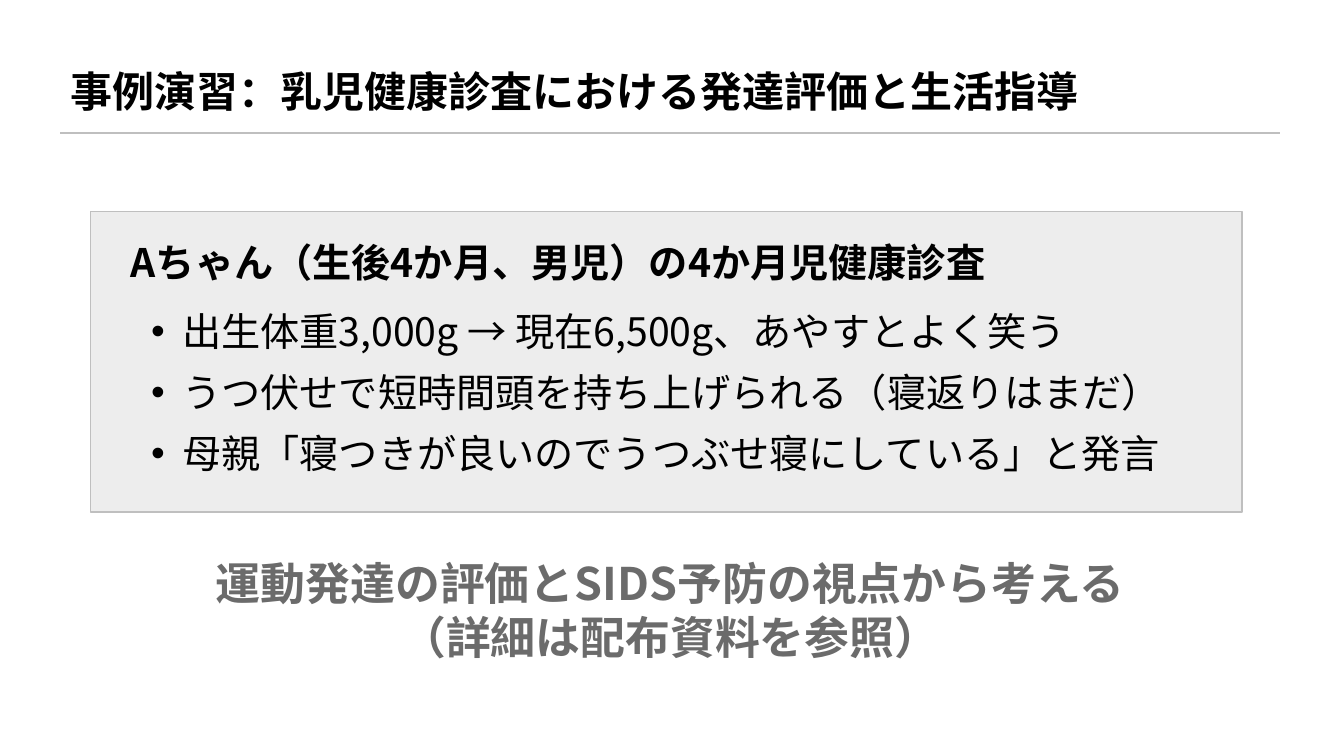
from lxml.etree import SubElement
from pptx import Presentation
from pptx.dml.color import RGBColor
from pptx.enum.shapes import MSO_CONNECTOR, MSO_SHAPE
from pptx.enum.text import MSO_ANCHOR, PP_ALIGN
from pptx.oxml.ns import qn
from pptx.util import Inches, Pt

FONT = "Noto Sans CJK JP"
BLACK = RGBColor(0x00, 0x00, 0x00)
GRAY = RGBColor(0x6B, 0x6B, 0x6B)
RULE = RGBColor(0xBF, 0xBF, 0xBF)
PANEL = RGBColor(0xED, 0xED, 0xED)

FINDINGS = [
    "出生体重3,000g → 現在6,500g、あやすとよく笑う",
    "うつ伏せで短時間頭を持ち上げられる（寝返りはまだ）",
    "母親「寝つきが良いのでうつぶせ寝にしている」と発言",
]
CONCLUSION = ["運動発達の評価とSIDS予防の視点から考える", "（詳細は配布資料を参照）"]


def add_bullet(paragraph):
    """Give a paragraph a hanging round bullet."""
    properties = paragraph._p.get_or_add_pPr()
    properties.set("marL", str(Inches(0.31)))
    properties.set("indent", str(-Inches(0.31)))
    SubElement(properties, qn("a:buFont")).set("typeface", "Arial")
    SubElement(properties, qn("a:buChar")).set("char", "•")
    paragraph.space_after = Pt(10)


def add_text(slide, box, lines, size, color=BLACK, bold=True,
             align=PP_ALIGN.LEFT, anchor=MSO_ANCHOR.MIDDLE, bulleted=False):
    """Write lines of text, one paragraph each, in a wrapped box."""
    frame = slide.shapes.add_textbox(*map(Inches, box)).text_frame
    frame.word_wrap = True
    frame.vertical_anchor = anchor
    frame.text = "\n".join(lines)
    for paragraph in frame.paragraphs:
        paragraph.alignment = align
        if bulleted:
            add_bullet(paragraph)
        for run in paragraph.runs:
            run.font.name = FONT
            run.font.size = Pt(size)
            run.font.bold = bold
            run.font.color.rgb = color
            SubElement(run.font._element, qn("a:ea")).set("typeface", FONT)


def add_rule(slide, left, right, top):
    """Draw a thin horizontal rule."""
    rule = slide.shapes.add_connector(
        MSO_CONNECTOR.STRAIGHT, Inches(left), Inches(top), Inches(right), Inches(top))
    rule.line.color.rgb = RULE
    rule.line.width = Pt(1)
    SubElement(rule._element.spPr, qn("a:effectLst"))


def add_panel(slide, box):
    """Draw the shaded panel behind the case."""
    panel = slide.shapes.add_shape(MSO_SHAPE.RECTANGLE, *map(Inches, box))
    panel.shadow.inherit = False
    panel.fill.solid()
    panel.fill.fore_color.rgb = PANEL
    panel.line.color.rgb = RULE
    panel.line.width = Pt(1)


def main():
    """Build the case exercise slide."""
    deck = Presentation()
    deck.slide_width, deck.slide_height = Inches(13.33), Inches(7.5)
    slide = deck.slides.add_slide(deck.slide_layouts[6])
    add_text(slide, (0.6, 0.45, 12.1, 0.9),
             ["事例演習：乳児健康診査における発達評価と生活指導"], 30)
    add_rule(slide, 0.6, 12.7, 1.32)
    add_panel(slide, (0.9, 2.1, 11.42, 2.98))
    add_text(slide, (1.2, 2.3, 11, 0.6),
             ["Aちゃん（生後4か月、男児）の4か月児健康診査"], 28)
    add_text(slide, (1.4, 3, 10.7, 1.5), FINDINGS, 28, bold=False,
             anchor=MSO_ANCHOR.TOP, bulleted=True)
    add_text(slide, (0.9, 5.75, 11.5, 0.6), CONCLUSION, 32, GRAY,
             align=PP_ALIGN.CENTER)
    deck.save("out.pptx")


if __name__ == "__main__":
    main()
